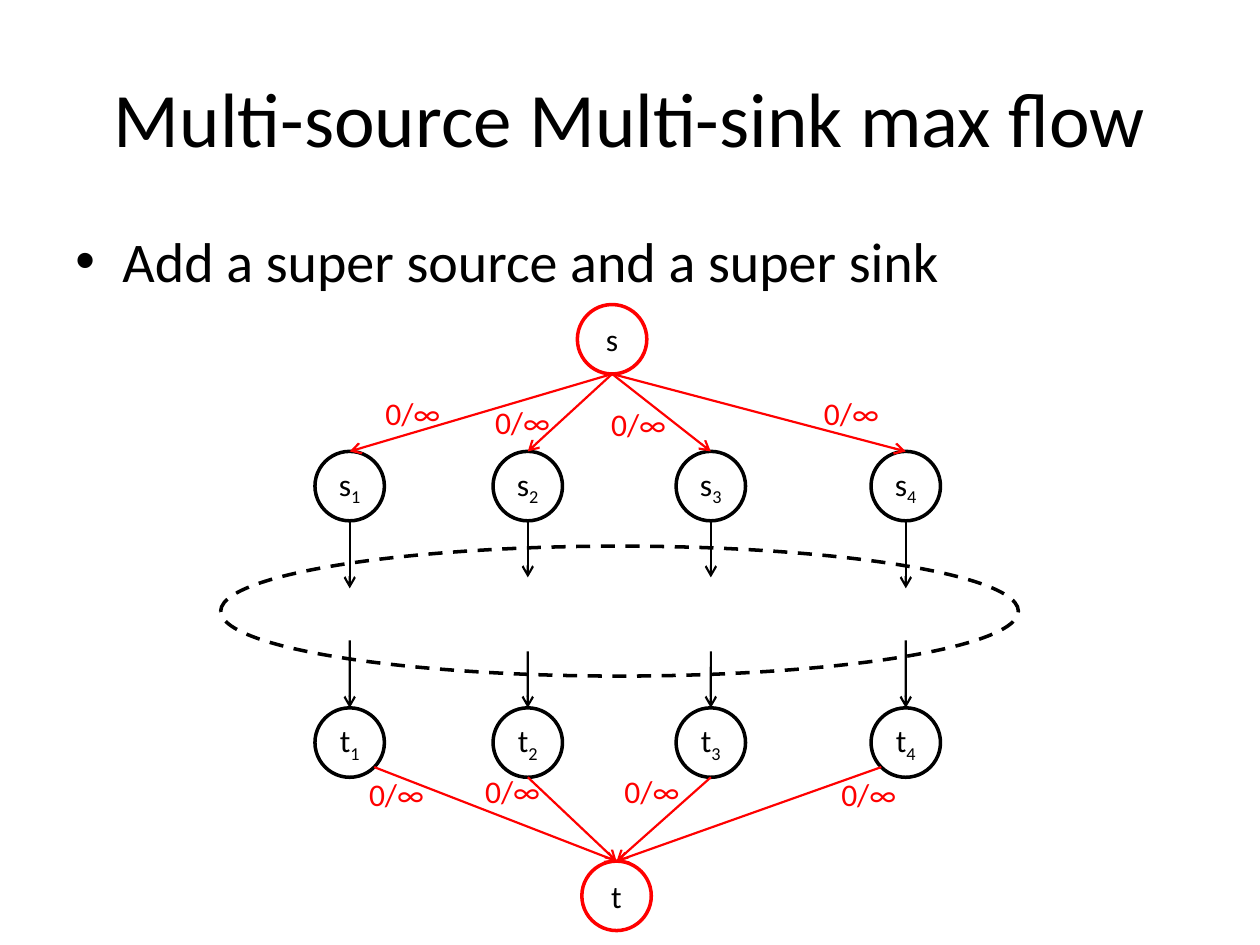
"""Build a slide on max flow with a super source and a super sink."""
from collections import namedtuple
from math import sqrt

from lxml.etree import SubElement
from pptx import Presentation
from pptx.dml.color import RGBColor as Rgb
from pptx.enum.dml import MSO_LINE as Dash
from pptx.enum.shapes import MSO_CONNECTOR as Wire, MSO_SHAPE as Form
from pptx.enum.text import MSO_ANCHOR as Anchor, MSO_AUTO_SIZE as Fit, PP_ALIGN as Align
from pptx.oxml.ns import qn
from pptx.util import Cm, Pt

Theme = namedtuple("Theme", "font ink red head body note ring wire")
theme = Theme("Calibri", Rgb(0, 0, 0), Rgb(255, 0, 0), Pt(44), Pt(32), Pt(18), Pt(2), Pt(1.25))


def write(shape, text, size, color, align, frame, sub=""):
    """Fill the shape with text and an optional subscript."""
    for key, value in frame.items():
        setattr(shape.text_frame, key, value)
    para = shape.text_frame.paragraphs[0]
    para.alignment = align
    for part in filter(None, (text, sub)):
        run = para.add_run()
        run.text = part
        for key, value in {"name": theme.font, "size": size}.items():
            setattr(run.font, key, value)
        run.font.color.rgb = color
    if sub:
        run.font._element.set("baseline", "-25000")
    return para


def arrow(x1, y1, x2, y2, color, goal=None):
    """Draw an arrow, joined to the top of its goal if there is one."""
    line = slide.shapes.add_connector(Wire.STRAIGHT, Cm(x1), Cm(y1), Cm(x2), Cm(y2))
    line.line.color.rgb = color
    line.line.width = theme.wire
    if goal is not None:
        line.end_connect(goal, 0)
    props = line.element.spPr
    SubElement(props.find(qn("a:ln")), qn("a:tailEnd"), type="arrow")
    SubElement(props, qn("a:effectLst"))


deck = Presentation()
deck.slide_width, deck.slide_height = Cm(25.4), Cm(19.05)
slide = deck.slides.add_slide(deck.slide_layouts[6])

title = slide.shapes.add_textbox(Cm(1.27), Cm(0.76), Cm(22.86), Cm(3.18))
write(title, "Multi-source Multi-sink max flow", theme.head, theme.ink, Align.CENTER,
      {"word_wrap": True, "vertical_anchor": Anchor.MIDDLE})

body = slide.shapes.add_textbox(Cm(1.27), Cm(4.45), Cm(22.86), Cm(12.57))
point = write(body, "Add a super source and a super sink", theme.body, theme.ink,
              Align.LEFT, {"word_wrap": True})
point.space_before = Pt(6.4)
props = point._p.get_or_add_pPr()
for key, value in {"marL": Cm(0.95), "indent": -Cm(0.95)}.items():
    props.set(key, str(value))
SubElement(props, qn("a:buFont"), typeface="Arial")
SubElement(props, qn("a:buChar"), char="•")

size = 1.4
cols = [7.05, 10.64, 14.33, 18.26]
top, low = 9.1, 14.27
source, sink = (12.34, 6.14), (12.43, 17.36)

ovals = [("", "", 12.49, 11.01, 16.08, 2.62, theme.ink),
         ("s", "", *source, size, size, theme.red),
         ("t", "", *sink, size, size, theme.red)]
for name, y in (("s", top), ("t", low)):
    ovals += [(name, str(i), x, y, size, size, theme.ink) for i, x in enumerate(cols, 1)]

tight = {"margin_left": 0, "margin_right": 0, "margin_top": 0, "margin_bottom": 0,
         "word_wrap": False, "vertical_anchor": Anchor.MIDDLE}
nodes = {}
for name, sub, x, y, wide, high, color in ovals:
    oval = slide.shapes.add_shape(Form.OVAL, Cm(x - wide / 2), Cm(y), Cm(wide), Cm(high))
    oval.shadow.inherit = False
    oval.fill.background()
    oval.line.color.rgb = color
    oval.line.width = theme.ring
    if name:
        write(oval, name, theme.note, theme.ink, Align.CENTER, tight, sub)
    else:
        oval.line.dash_style = Dash.DASH
    nodes[name + sub] = oval

slant = size / 2 / sqrt(2)
drops = [1.36, 1.14, 1.14, 1.36]
leans = [slant, 0, 0, -slant]
for i, (x, drop, lean) in enumerate(zip(cols, drops, leans), 1):
    arrow(x, top + size, x, top + size + drop, theme.ink)
    arrow(x, low - drop, x, low, theme.ink, nodes[f"t{i}"])
    arrow(source[0], source[1] + size, x, top, theme.red, nodes[f"s{i}"])
    edge = low + size / 2 + (slant if lean else size / 2)
    arrow(x + lean, edge, *sink, theme.red, nodes["t"])

labels = [(7.52, 7.82), (9.73, 8), (12.07, 8.05), (16.36, 7.82),
          (7.19, 15.49), (9.53, 15.44), (12.34, 15.44), (16.71, 15.49)]
for x, y in labels:
    label = slide.shapes.add_textbox(Cm(x), Cm(y), Cm(1.63), Cm(1.02))
    write(label, "0/∞", theme.note, theme.red, Align.LEFT,
          {"word_wrap": False, "auto_size": Fit.SHAPE_TO_FIT_TEXT})

deck.save("out.pptx")
